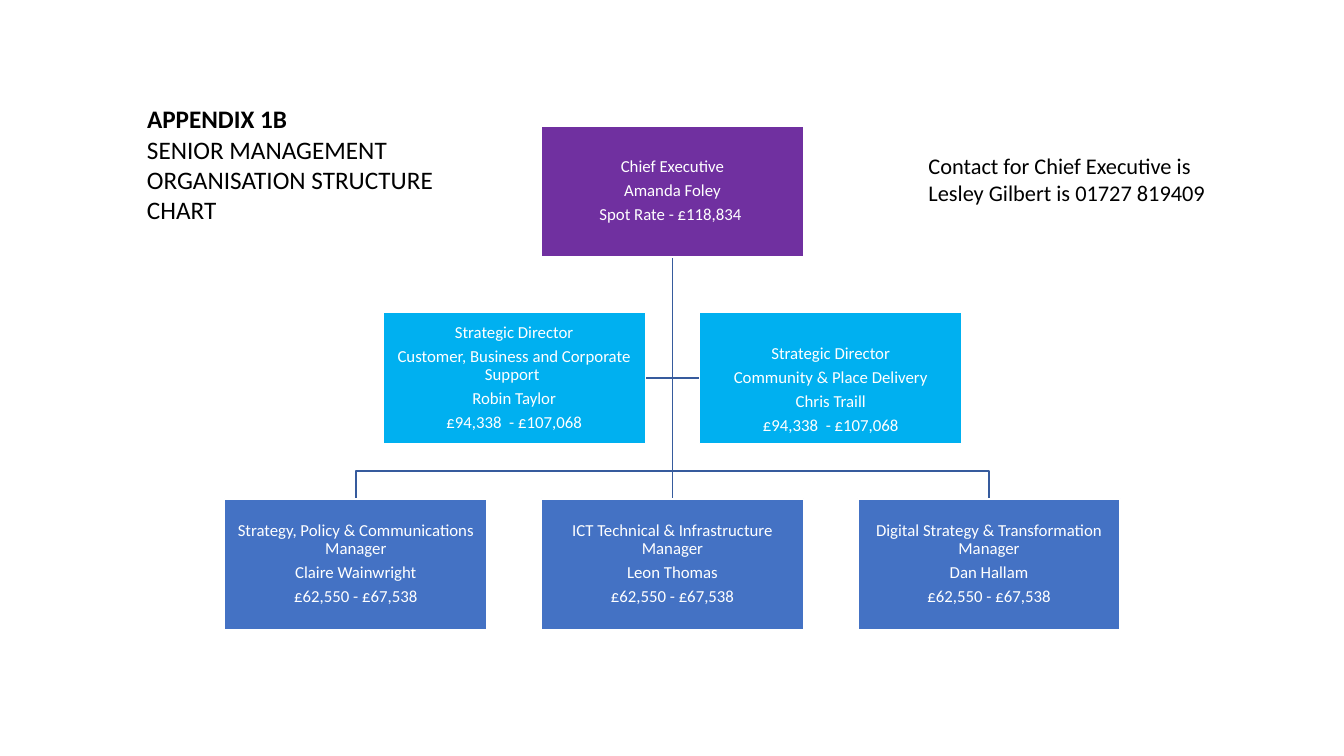
"""Build the senior management organisation structure chart slide."""
from dataclasses import dataclass

from lxml import etree
from pptx import Presentation
from pptx.dml.color import RGBColor
from pptx.enum.shapes import MSO_CONNECTOR, MSO_SHAPE
from pptx.enum.text import MSO_ANCHOR, PP_ALIGN
from pptx.oxml.ns import qn
from pptx.util import Inches, Pt

RECT = MSO_SHAPE.RECTANGLE
STRAIGHT = MSO_CONNECTOR.STRAIGHT
MIDDLE = MSO_ANCHOR.MIDDLE
CENTER = PP_ALIGN.CENTER

FONT = "Calibri"
WHITE, BLACK, LINE = "FFFFFF", "000000", "365B9D"
PURPLE, CYAN, BLUE = "7030A0", "00B0F0", "4472C4"

BOX_W, BOX_H = 2.6, 1.3
CENTER_X, COL_STEP = 6.67, 3.14
TOP, ROW_STEP = 1.25, 1.85
INSET = 0.01
DIRECTOR_PAY = "£94,338  - £107,068"
MANAGER_PAY = "£62,550 - £67,538"

BOX_FRAME = {"word_wrap": True, "vertical_anchor": MIDDLE, "margin_left": Inches(INSET),
             "margin_right": Inches(INSET), "margin_bottom": Inches(INSET)}
BOX_PARAGRAPH = {"alignment": CENTER, "line_spacing": 0.9, "space_after": Pt(4.2)}


@dataclass(frozen=True)
class Post:
    """A box of the chart, placed by row and by column from the centre."""
    row: int
    col: float
    fill: str
    lines: tuple[str, ...]
    inset_top: float = INSET

    @property
    def x(self) -> float:
        """Return the horizontal centre."""
        return CENTER_X + self.col * COL_STEP

    @property
    def y(self) -> float:
        """Return the top edge."""
        return TOP + self.row * ROW_STEP


@dataclass(frozen=True)
class Label:
    """A free text beside the chart."""
    left: float
    top: float
    width: float
    height: float
    size: int
    lines: tuple[str, ...]
    bold: bool = False


CHIEF = Post(0, 0, PURPLE, ("Chief Executive", "Amanda Foley", "Spot Rate - £118,834 "))
DIRECTORS = (
    Post(1, -0.5, CYAN, ("Strategic Director", "Customer, Business and Corporate Support ",
                         "Robin Taylor", DIRECTOR_PAY)),
    Post(1, 0.5, CYAN, ("Strategic Director", "Community & Place Delivery",
                        "Chris Traill", DIRECTOR_PAY), 0.25),
)
MANAGERS = (
    Post(2, -1, BLUE, ("Strategy, Policy & Communications Manager",
                       "Claire Wainwright", MANAGER_PAY)),
    Post(2, 0, BLUE, ("ICT Technical & Infrastructure Manager",
                      "Leon Thomas", MANAGER_PAY)),
    Post(2, 1, BLUE, ("Digital Strategy & Transformation Manager",
                      "Dan Hallam", MANAGER_PAY)),
)
LABELS = (
    Label(1.36, 1.28, 3.16, 1.01, 18, ("SENIOR MANAGEMENT ORGANISATION STRUCTURE CHART",)),
    Label(1.36, 0.98, 1.78, 0.4, 18, ("APPENDIX 1B",), True),
    Label(9.11, 1.46, 4.01, 0.64, 16, ("Contact for Chief Executive is",
                                       "Lesley Gilbert is 01727 819409")),
)


def rgb(value: str) -> RGBColor:
    """Return the colour for a hex string."""
    return RGBColor.from_string(value)


def apply(target, values: dict) -> None:
    """Set each named attribute on the target."""
    for name, value in values.items():
        setattr(target, name, value)


def write(tf, lines: tuple[str, ...], color: str, font: dict, paragraph: dict) -> None:
    """Fill a text frame with one paragraph a line."""
    for i, line in enumerate(lines):
        p = tf.add_paragraph() if i else tf.paragraphs[0]
        apply(p, paragraph)
        r = p.add_run()
        r.text = line
        apply(r.font, {"name": FONT, **font})
        r.font.color.rgb = rgb(color)


def style_line(sp, color: str) -> None:
    """Give a shape or connector a one-point line."""
    sp.line.color.rgb = rgb(color)
    sp.line.width = Pt(1)


def draw_route(slide, points: list[tuple[float, float]]) -> None:
    """Draw an open line through the points."""
    (x, y), *rest = [(Inches(a), Inches(b)) for a, b in points]
    if len(points) == 2:
        sp = slide.shapes.add_connector(STRAIGHT, x, y, *rest[0])
        etree.SubElement(sp._element.spPr, qn("a:effectLst"))
    else:
        builder = slide.shapes.build_freeform(x, y)
        builder.add_line_segments(rest, close=False)
        sp = builder.convert_to_shape()
        sp.fill.background()
        sp.shadow.inherit = False
    style_line(sp, LINE)


def draw_links(slide) -> None:
    """Join the chief executive to the directors and managers."""
    start = (CENTER_X, CHIEF.y + BOX_H)
    for post in DIRECTORS:
        side = BOX_W / 2 if post.col < 0 else -BOX_W / 2
        middle = post.y + BOX_H / 2
        draw_route(slide, [start, (CENTER_X, middle), (post.x + side, middle)])
    for post in MANAGERS:
        bus = post.y - (ROW_STEP - BOX_H) / 2
        bends = [(CENTER_X, bus), (post.x, bus)] if post.col else []
        draw_route(slide, [start, *bends, (post.x, post.y)])


def draw_post(slide, post: Post) -> None:
    """Draw a filled box with its text."""
    sp = slide.shapes.add_shape(RECT, Inches(post.x - BOX_W / 2), Inches(post.y),
                                Inches(BOX_W), Inches(BOX_H))
    sp.shadow.inherit = False
    sp.fill.solid()
    sp.fill.fore_color.rgb = rgb(post.fill)
    style_line(sp, WHITE)
    tf = sp.text_frame
    apply(tf, {**BOX_FRAME, "margin_top": Inches(post.inset_top)})
    write(tf, post.lines, WHITE, {"size": Pt(12)}, BOX_PARAGRAPH)


def draw_label(slide, label: Label) -> None:
    """Draw a text box."""
    sp = slide.shapes.add_textbox(Inches(label.left), Inches(label.top),
                                  Inches(label.width), Inches(label.height))
    tf = sp.text_frame
    tf.word_wrap = True
    write(tf, label.lines, BLACK, {"size": Pt(label.size), "bold": label.bold}, {})


def main() -> None:
    """Build and save the slide."""
    prs = Presentation()
    apply(prs, {"slide_width": Inches(13.33), "slide_height": Inches(7.5)})
    slide = prs.slides.add_slide(prs.slide_layouts[6])
    draw_links(slide)
    for post in (CHIEF, *MANAGERS, *DIRECTORS):
        draw_post(slide, post)
    for label in LABELS:
        draw_label(slide, label)
    prs.save("out.pptx")


if __name__ == "__main__":
    main()
